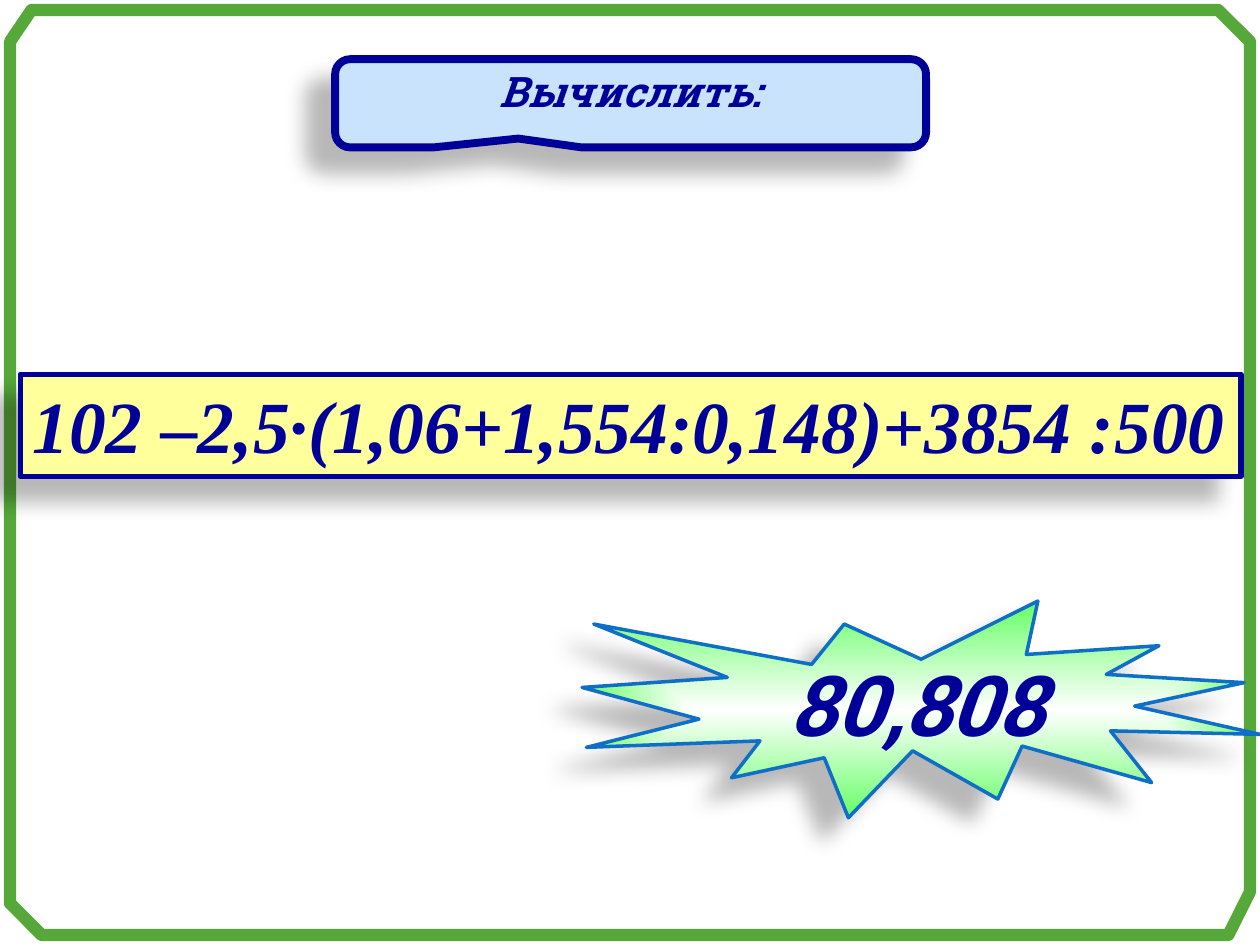
from lxml.etree import SubElement
from pptx import Presentation
from pptx.dml.color import RGBColor
from pptx.enum.shapes import MSO_SHAPE
from pptx.enum.text import MSO_ANCHOR, PP_ALIGN
from pptx.oxml import parse_xml
from pptx.oxml.ns import nsdecls, qn
from pptx.util import Inches, Pt

COLORS = {
    "frame": "55A839",
    "navy": "000099",
    "sky": "C8E3FB",
    "cream": "FFFF9B",
    "blue": "0F6FC6",
    "white": "FFFFFF",
    "green": "66FF66",
    "shadow": "000000",
}


class SlideBuilder:
    """Holds the text style and the current slide."""

    font = "Roboto Slab"
    color = "navy"

    def __init__(self, prs):
        self.s = prs.slides.add_slide(prs.slide_layouts[5])

    def rgb(self, name):
        return RGBColor.from_string(COLORS[name])

    def outline(self, sp, color, width):
        sp.line.color.rgb = self.rgb(color)
        sp.line.width = Pt(width)

    def shadow(self, sp):
        effects = sp._element.spPr.find(qn("a:effectLst"))
        shadow = SubElement(effects, qn("a:outerShdw"), blurRad=str(Pt(11.8)),
                            dist=str(Pt(19.7)), dir=str(141 * 60000),
                            algn="ctr", rotWithShape="0")
        color = SubElement(shadow, qn("a:srgbClr"), val=COLORS["shadow"])
        SubElement(color, qn("a:alpha"), val="28000")

    def frame(self, points, color, width):
        start, *rest = [(Inches(x), Inches(y)) for x, y in points]
        builder = self.s.shapes.build_freeform(*start)
        builder.add_line_segments(rest, close=True)
        sp = builder.convert_to_shape()
        sp.shadow.inherit = False
        sp.fill.background()
        self.outline(sp, color, width)

    def shape(self, kind, box, line, width, fill=None):
        sp = self.s.shapes.add_shape(kind, *map(Inches, box))
        sp.shadow.inherit = False
        if fill:
            sp.fill.solid()
            sp.fill.fore_color.rgb = self.rgb(fill)
        self.outline(sp, line, width)
        self.shadow(sp)
        return sp

    def radial_fill(self, sp, inner, outer):
        grad = parse_xml(
            f'<a:gradFill {nsdecls("a")} rotWithShape="1"><a:gsLst>'
            f'<a:gs pos="0"><a:srgbClr val="{COLORS[inner]}"/></a:gs>'
            f'<a:gs pos="100000"><a:srgbClr val="{COLORS[outer]}"/></a:gs>'
            '</a:gsLst><a:path path="shape">'
            '<a:fillToRect l="50000" t="50000" r="50000" b="50000"/>'
            '</a:path></a:gradFill>')
        sp._element.spPr.find(qn("a:prstGeom")).addnext(grad)

    def text(self, sp, text, size, font=None, align=PP_ALIGN.CENTER,
             anchor=MSO_ANCHOR.TOP, wrap=True):
        tf = sp.text_frame
        tf.word_wrap = wrap
        tf.vertical_anchor = anchor
        p = tf.paragraphs[0]
        p.alignment = align
        r = p.add_run()
        r.text = text
        r.font.name = font or self.font
        r.font.size = Pt(size)
        r.font.bold = r.font.italic = True
        r.font.color.rgb = self.rgb(self.color)

    def title(self, text, box, size):
        sp = self.s.shapes.title
        sp.left, sp.top, sp.width, sp.height = map(Inches, box)
        self.s.shapes.element.append(sp.element)  # bring to front
        self.text(sp, text, size)


def main():
    prs = Presentation()
    prs.slide_width, prs.slide_height = Inches(10), Inches(7.5)
    b = SlideBuilder(prs)

    # Frame with cut corners
    b.frame([(0.08, 0.33), (0.08, 7.17), (0.33, 7.42), (9.75, 7.42),
             (9.92, 7.08), (9.92, 0.33), (9.67, 0.08), (0.25, 0.08)],
            "frame", 7)

    # Title on a callout
    callout_box = (2.66, 0.47, 4.69, 0.7)
    callout = b.shape(MSO_SHAPE.ROUNDED_RECTANGULAR_CALLOUT, callout_box,
                      "navy", 4.5, "sky")
    for i, value in enumerate((-0.19, 0.4, 0.17)):
        callout.adjustments[i] = value
    b.title("Вычислить:", callout_box, 24)

    # Expression to evaluate
    expression = b.shape(MSO_SHAPE.RECTANGLE, (0.16, 2.97, 9.69, 0.81),
                         "navy", 3, "cream")
    b.text(expression, "102 –2,5∙(1,06+1,554:0,148)+3854 :500", 42,
           font="Times New Roman", align=PP_ALIGN.LEFT)

    # Answer burst
    answer = b.shape(MSO_SHAPE.EXPLOSION1, (4.62, 4.77, 5.38, 1.72), "blue", 2)
    b.radial_fill(answer, "white", "green")
    b.text(answer, "80,808", 48, anchor=MSO_ANCHOR.MIDDLE, wrap=False)

    prs.save("out.pptx")


if __name__ == "__main__":
    main()
